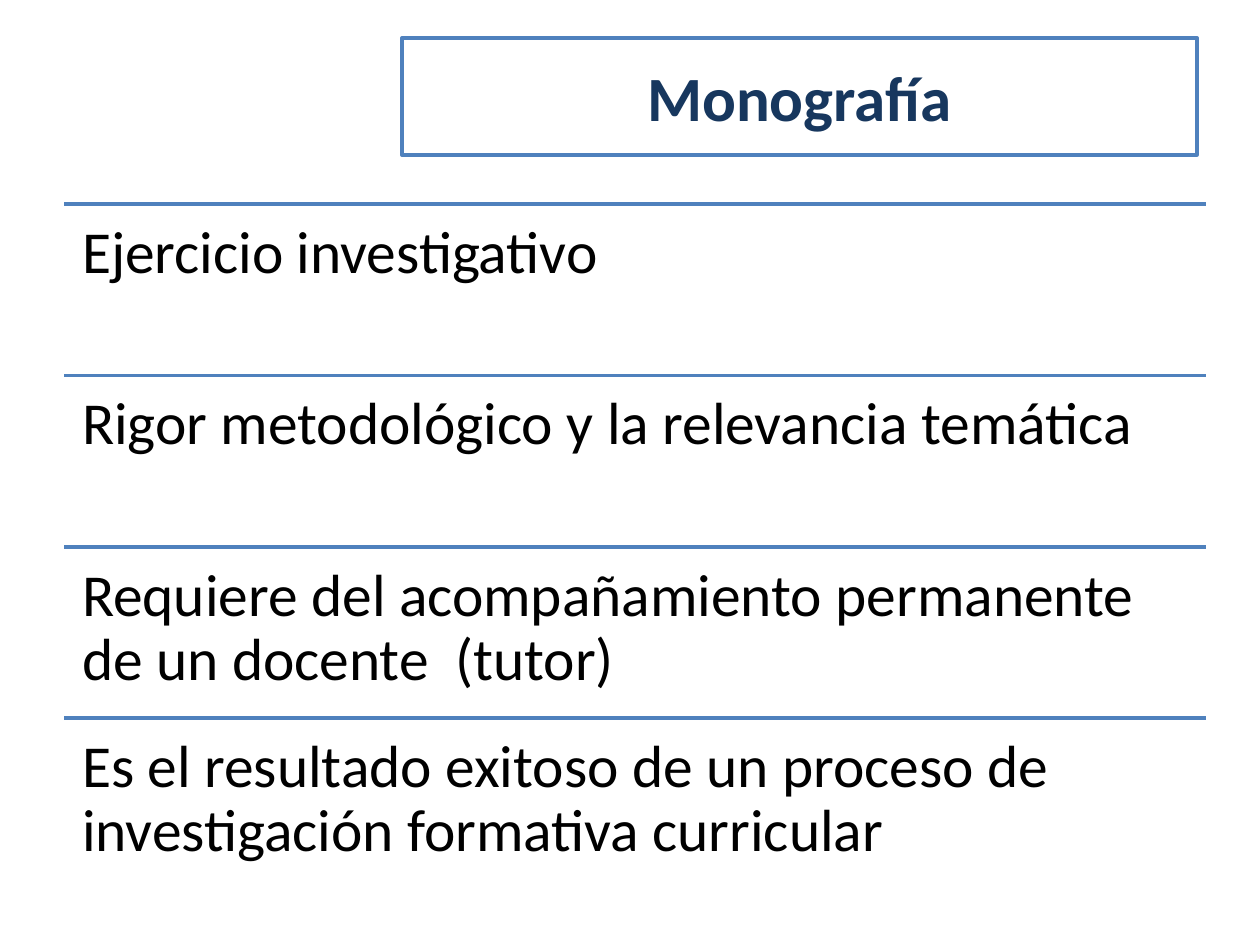
from dataclasses import dataclass

import pptx
import pptx.dml.color
import pptx.enum.shapes
import pptx.enum.text
import pptx.oxml
import pptx.oxml.ns
import pptx.slide
import pptx.util

Pt = pptx.util.Pt
RGBColor = pptx.dml.color.RGBColor

WHITE = RGBColor(0xFF, 0xFF, 0xFF)
BLACK = RGBColor(0, 0, 0)
BLUE = RGBColor(0x4F, 0x81, 0xBD)
NAVY = RGBColor(0x17, 0x37, 0x5E)

FONT = "Calibri"
RULE_WIDTH = 2
LEFT, FIRST_TOP = 36.72, 116.64
ROW_WIDTH, ROW_HEIGHT = 652.32, 97.92
INSET = 10.2


@dataclass
class Feature:
    text: str
    top: float


def add_title(slide: pptx.slide.Slide, text: str) -> None:
    heading = slide.shapes.title
    heading.left, heading.top = Pt(229.68), Pt(21.6)
    heading.width, heading.height = Pt(454.32), Pt(66.96)
    heading.fill.solid()
    heading.fill.fore_color.rgb = WHITE
    heading.line.color.rgb = BLUE
    heading.line.width = Pt(RULE_WIDTH)
    heading.text_frame.vertical_anchor = pptx.enum.text.MSO_ANCHOR.MIDDLE
    paragraph = heading.text_frame.paragraphs[0]
    paragraph.alignment = pptx.enum.text.PP_ALIGN.CENTER
    add_run(paragraph, text, 36, NAVY, bold=True)


def add_run(paragraph, text: str, size: float, color: RGBColor, bold: bool = False) -> None:
    run = paragraph.add_run()
    run.text = text
    run.font.name = FONT
    run.font.size = Pt(size)
    run.font.bold = bold
    run.font.color.rgb = color


def add_feature(slide: pptx.slide.Slide, feature: Feature) -> None:
    # Rule above the row
    top = Pt(feature.top)
    rule = slide.shapes.add_connector(
        pptx.enum.shapes.MSO_CONNECTOR.STRAIGHT,
        Pt(LEFT), top, Pt(LEFT + ROW_WIDTH), top)
    rule.line.color.rgb = BLUE
    rule.line.width = Pt(RULE_WIDTH)
    properties = rule._element.spPr
    properties.append(pptx.oxml.parse_xml(
        f"<a:effectLst {pptx.oxml.ns.nsdecls('a')}/>"))

    # Row text
    box = slide.shapes.add_textbox(Pt(LEFT), top, Pt(ROW_WIDTH), Pt(ROW_HEIGHT))
    frame = box.text_frame
    frame.word_wrap = True
    frame.margin_left = frame.margin_right = Pt(INSET)
    frame.margin_top = frame.margin_bottom = Pt(INSET)
    paragraph = frame.paragraphs[0]
    paragraph.line_spacing = 0.9
    add_run(paragraph, feature.text, 34, BLACK)


def main() -> None:
    deck = pptx.Presentation()
    deck.slide_width, deck.slide_height = Pt(720), Pt(540)
    slide = deck.slides.add_slide(deck.slide_layouts[5])

    add_title(slide, "Monografía")

    # Features of the monograph, at an equal pitch
    texts = [
        "Ejercicio investigativo",
        "Rigor metodológico y la relevancia temática",
        "Requiere del acompañamiento permanente de un docente  (tutor)",
        "Es el resultado exitoso de un proceso de investigación formativa curricular",
    ]
    for row, text in enumerate(texts):
        add_feature(slide, Feature(text, FIRST_TOP + row * ROW_HEIGHT))

    deck.save("out.pptx")


if __name__ == "__main__":
    main()
